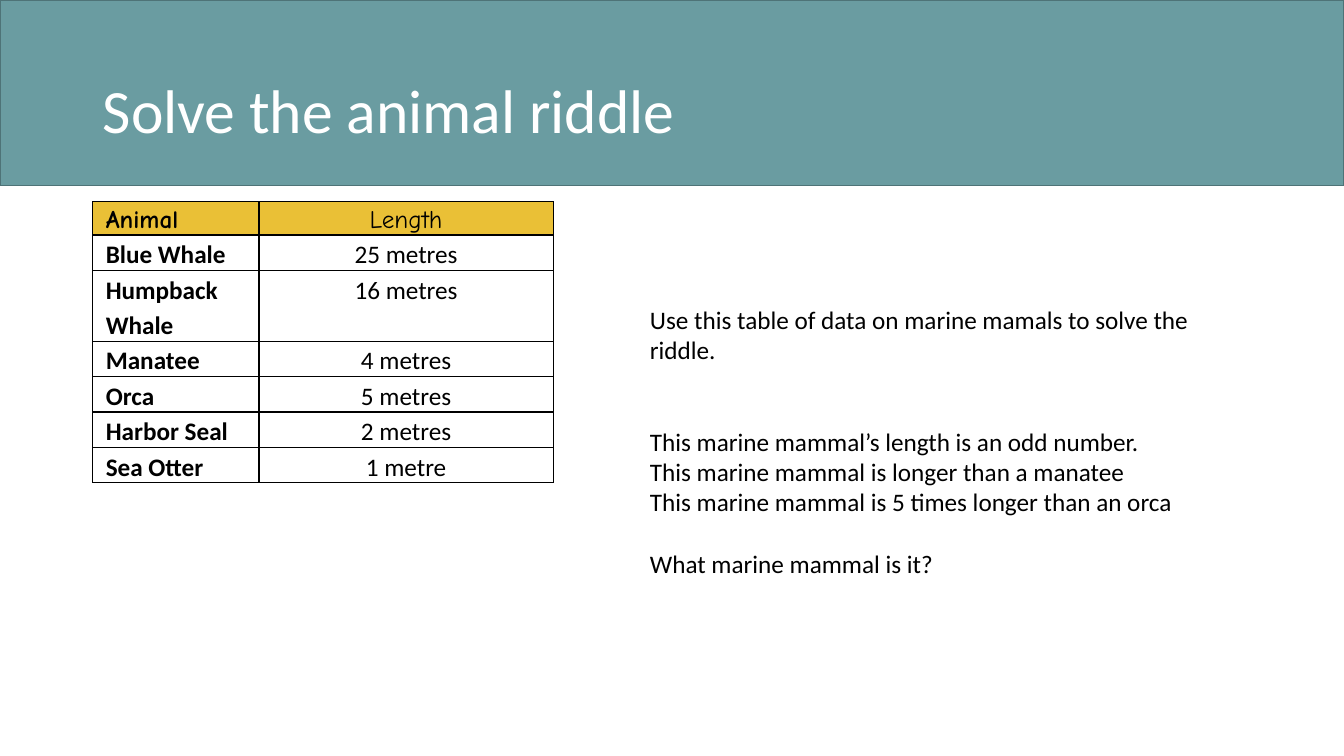
from typing import NamedTuple

from lxml.etree import SubElement as Sub
from pptx import Presentation
from pptx.dml.color import RGBColor as Rgb
from pptx.enum.shapes import MSO_SHAPE as Kind
from pptx.enum.text import MSO_ANCHOR as Anchor, MSO_AUTO_SIZE as Fit, PP_ALIGN as Align
from pptx.oxml.ns import qn
from pptx.util import Pt

HUES = {"band": "6A9CA1", "edge": "4E7377", "head": "EAC036",
        "ink": "000000", "white": "FFFFFF"}
FONT = "Calibri"
HEAD_FONT = "Comic Neue"


class Row(NamedTuple):
    animal: str
    length: str
    high: float = 25


class Line(NamedTuple):
    text: str
    gap: float = 0


ROWS = [
    Row("Animal", "Length", 23),
    Row("Blue Whale", "25 metres"),
    Row("Humpback Whale", "16 metres", 50),
    Row("Manatee", "4 metres"),
    Row("Orca", "5 metres"),
    Row("Harbor Seal", "2 metres"),
    Row("Sea Otter", "1 metre"),
]
WIDTHS = [118.8, 210.2]
LINES = [
    Line("Use this table of data on marine mamals to solve the riddle."),
    Line("This marine mammal’s length is an odd number.", 44),
    Line("This marine mammal is longer than a manatee"),
    Line("This marine mammal is 5 times longer than an orca"),
    Line("What marine mammal is it?", 22),
]


def hue(name: str) -> Rgb:
    return Rgb.from_string(HUES[name])


def style(para, size: float, name: str = "ink", face: str = FONT,
          bold: bool = False) -> None:
    font = para.font
    font.size, font.name, font.bold = Pt(size), face, bold
    font.color.rgb = hue(name)


def frame(cell) -> None:
    """Draw a thin border on all four sides of a cell."""
    props = cell._tc.get_or_add_tcPr()
    for side in ("lnL", "lnR", "lnT", "lnB"):
        edge = Sub(props, qn(f"a:{side}"), w=str(Pt(1)))
        fill = Sub(edge, qn("a:solidFill"))
        Sub(fill, qn("a:srgbClr"), val=HUES["ink"])


def fill_cell(cell, text: str, head: bool, first: bool) -> None:
    cell.margin_left = cell.margin_right = Pt(9.4)
    cell.margin_top = cell.margin_bottom = Pt(0)
    frame(cell)
    if head:
        cell.fill.solid()
        cell.fill.fore_color.rgb = hue("head")
    else:
        cell.fill.background()
    para = cell.text_frame.paragraphs[0]
    para.text = text
    para.line_spacing = 1.15
    para.alignment = Align.LEFT if first else Align.CENTER
    style(para, 18, face=HEAD_FONT if head else FONT, bold=first)


def add_data(slide) -> None:
    shape = slide.shapes.add_table(len(ROWS), len(WIDTHS), Pt(66.2), Pt(144),
                                   Pt(sum(WIDTHS)), Pt(sum(r.high for r in ROWS)))
    table = shape.table
    table.first_row = table.horz_banding = False
    for col, wide in zip(table.columns, WIDTHS):
        col.width = Pt(wide)
    for i, row in enumerate(ROWS):
        table.rows[i].height = Pt(row.high)
        for j, text in enumerate((row.animal, row.length)):
            fill_cell(table.cell(i, j), text, i == 0, j == 0)


def add_riddle(slide) -> None:
    box = slide.shapes.add_textbox(Pt(457.2), Pt(213.8), Pt(400.3), Pt(203.8))
    body = box.text_frame
    body.word_wrap = True
    body.auto_size = Fit.SHAPE_TO_FIT_TEXT
    for i, line in enumerate(LINES):
        para = body.add_paragraph() if i else body.paragraphs[0]
        para.text = line.text
        if line.gap:
            para.space_before = Pt(line.gap)
        style(para, 18)


def add_title(slide) -> None:
    # Band across the top, behind the title
    band = slide.shapes.add_shape(Kind.RECTANGLE, Pt(0), Pt(0), Pt(960), Pt(132.5))
    band.shadow.inherit = False
    band.fill.solid()
    band.fill.fore_color.rgb = hue("band")
    band.line.color.rgb = hue("edge")
    band.line.width = Pt(1)

    # Title text
    title = slide.shapes.title
    band.element.addnext(title.element)
    title.left, title.top, title.width, title.height = map(Pt, (66.2, 28.8, 828, 104.4))
    title.text_frame.vertical_anchor = Anchor.MIDDLE
    para = title.text_frame.paragraphs[0]
    para.text = "Solve the animal riddle"
    para.alignment = Align.LEFT
    para.line_spacing = 0.9
    style(para, 44, "white")


def main() -> None:
    deck = Presentation()
    deck.slide_width, deck.slide_height = Pt(960), Pt(540)
    slide = deck.slides.add_slide(deck.slide_layouts[5])
    add_title(slide)
    add_data(slide)
    add_riddle(slide)
    deck.save("out.pptx")


if __name__ == "__main__":
    main()
